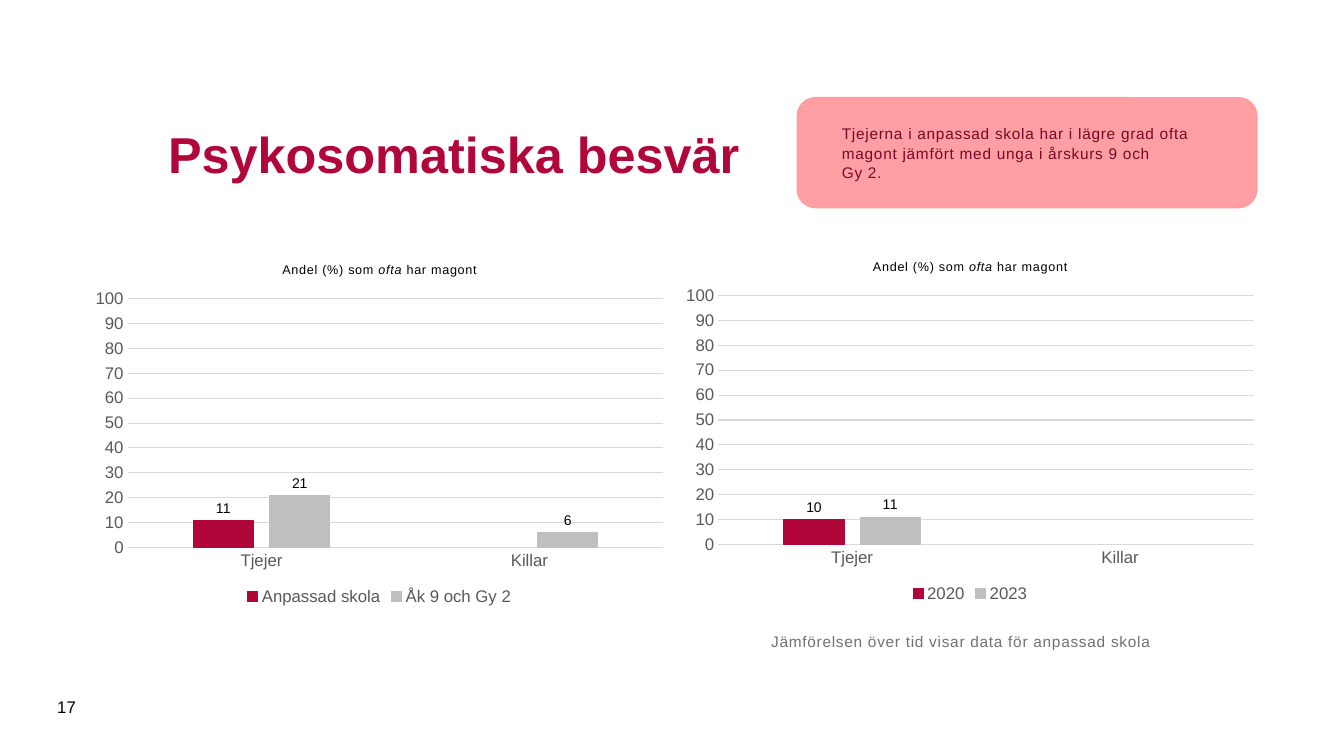
from lxml.etree import SubElement
from pptx import Presentation
from pptx.chart.data import CategoryChartData
from pptx.dml.color import RGBColor
from pptx.enum.chart import XL_CHART_TYPE as ChartType
from pptx.enum.chart import XL_LABEL_POSITION as LabelPos
from pptx.enum.chart import XL_LEGEND_POSITION as LegendPos
from pptx.enum.chart import XL_TICK_MARK as Tick
from pptx.enum.shapes import MSO_SHAPE as Shape
from pptx.enum.text import MSO_ANCHOR as Anchor
from pptx.enum.text import PP_ALIGN as Align
from pptx.oxml.ns import qn
from pptx.util import Pt

CRIMSON = RGBColor(0xB1, 0x06, 0x3A)
WINE = RGBColor(0x79, 0x07, 0x26)
PINK = RGBColor(0xFF, 0x9D, 0xA2)
BLACK = RGBColor(0x00, 0x00, 0x00)
DARK_GRAY = RGBColor(0x59, 0x59, 0x59)
MID_GRAY = RGBColor(0x71, 0x71, 0x71)
BAR_GRAY = RGBColor(0xBF, 0xBF, 0xBF)
GRID_GRAY = RGBColor(0xD9, 0xD9, 0xD9)
FONT = "Arial"
NUMBER_FORMAT = "#,##0;#,##0"


def style_font(font, size, color, bold=False):
    font.name = FONT
    font.size = Pt(size)
    font.bold = bold
    font.color.rgb = color


def add_run(p, text, spacing=0):
    r = p.add_run()
    r.text = text
    if spacing:
        r._r.get_or_add_rPr().set("spc", str(round(spacing * 100)))
    return r


def fill_text(tf, lines, size, color, bold=False, spacing=0, line_spacing=1.0):
    tf.word_wrap = True
    for i, line in enumerate(lines):
        p = tf.add_paragraph() if i else tf.paragraphs[0]
        p.alignment = Align.LEFT
        p.line_spacing = line_spacing
        add_run(p, line, spacing)
        style_font(p.font, size, color, bold)


def set_margins(tf, x, y):
    tf.margin_left = tf.margin_right = Pt(x)
    tf.margin_top = tf.margin_bottom = Pt(y)


def add_text(s, box, text, size, color, bold=False, spacing=0,
             anchor=Anchor.MIDDLE, margins=(7.2, 3.6)):
    tf = s.shapes.add_textbox(*map(Pt, box)).text_frame
    tf.vertical_anchor = anchor
    set_margins(tf, *margins)
    fill_text(tf, [text], size, color, bold, spacing)


def add_callout(s, box, lines):
    sp = s.shapes.add_shape(Shape.ROUNDED_RECTANGLE, *map(Pt, box))
    sp.shadow.inherit = False
    sp.fill.solid()
    sp.fill.fore_color.rgb = PINK
    srgb = sp._element.spPr.find(qn("a:solidFill")).find(qn("a:srgbClr"))
    SubElement(srgb, qn("a:alpha")).set("val", "98000")
    sp.line.color.rgb = PINK
    sp.line.width = Pt(1)
    tf = sp.text_frame
    tf.vertical_anchor = Anchor.MIDDLE
    set_margins(tf, 28, 14.4)
    fill_text(tf, lines, 11, WINE, spacing=0.5, line_spacing=1.05)


def style_line(line, color):
    line.color.rgb = color
    line.width = Pt(0.75)


def style_axes(chart):
    cat, val = chart.category_axis, chart.value_axis
    for axis in (cat, val):
        axis.major_tick_mark = axis.minor_tick_mark = Tick.NONE
        style_font(axis.tick_labels.font, 12, DARK_GRAY)
    cat.has_major_gridlines = False
    style_line(cat.format.line, GRID_GRAY)
    val.minimum_scale, val.maximum_scale, val.major_unit = 0, 100, 10
    val.format.line.fill.background()
    val.has_major_gridlines = True
    style_line(val.major_gridlines.format.line, GRID_GRAY)
    val.tick_labels.number_format = NUMBER_FORMAT
    val.tick_labels.number_format_is_linked = False


def style_series(series, color):
    series.invert_if_negative = False
    series.format.fill.solid()
    series.format.fill.fore_color.rgb = color
    style_line(series.format.line, color)
    labels = series.data_labels
    labels.show_value = True
    labels.position = LabelPos.OUTSIDE_END
    labels.number_format = NUMBER_FORMAT
    labels.number_format_is_linked = False
    style_font(labels.font, 10, BLACK)


def add_title(chart):
    chart.has_title = True
    chart.chart_title.include_in_layout = False
    p = chart.chart_title.text_frame.paragraphs[0]
    style_font(p.font, 9, BLACK)
    for text, italic in (("Andel (%) som ", False), ("ofta", True), (" har magont", False)):
        r = add_run(p, text, 0.5)
        style_font(r.font, 9, BLACK)
        r.font.italic = italic


def add_column_chart(s, left, top, series):
    data = CategoryChartData(number_format=NUMBER_FORMAT)
    data.categories = ["Tjejer", "Killar"]
    for name, values in series:
        data.add_series(name, values)
    chart = s.shapes.add_chart(ChartType.COLUMN_CLUSTERED, Pt(left), Pt(top),
                               Pt(422.6), Pt(260.6), data).chart
    style_font(chart.font, 10, BLACK)
    add_title(chart)
    style_axes(chart)
    chart.has_legend = True
    chart.legend.position = LegendPos.BOTTOM
    chart.legend.include_in_layout = False
    style_font(chart.legend.font, 12, DARK_GRAY)
    plot = chart.plots[0]
    plot.vary_by_categories = False
    plot.gap_width = 219
    plot.overlap = -27
    for item, color in zip(plot.series, (CRIMSON, BAR_GRAY)):
        style_series(item, color)


def main():
    prs = Presentation()
    prs.slide_width, prs.slide_height = Pt(960), Pt(540)
    s = prs.slides.add_slide(prs.slide_layouts[6])
    add_text(s, (113, 58.3, 737.3, 102.2), "Psykosomatiska besvär", 36, CRIMSON, bold=True)
    add_text(s, (33.8, 490.3, 41, 28.8), "17", 12, BLACK)
    add_column_chart(s, 59.8, 175,
                     [("Anpassad skola", (11, None)), ("Åk 9 och Gy 2", (21, 6))])
    add_column_chart(s, 481.7, 172.8, [("2020", (10, None)), ("2023", (11, None))])
    add_callout(s, (569.5, 69.8, 328.3, 78.5),
                ["Tjejerna i anpassad skola har i lägre grad ofta magont jämfört "
                 "med unga i årskurs 9 och", "Gy 2."])
    add_text(s, (550.8, 451.4, 382.3, 67.7),
             "Jämförelsen över tid visar data för anpassad skola", 11, MID_GRAY,
             spacing=0.5, anchor=Anchor.TOP, margins=(0, 0))
    prs.save("out.pptx")


if __name__ == "__main__":
    main()
